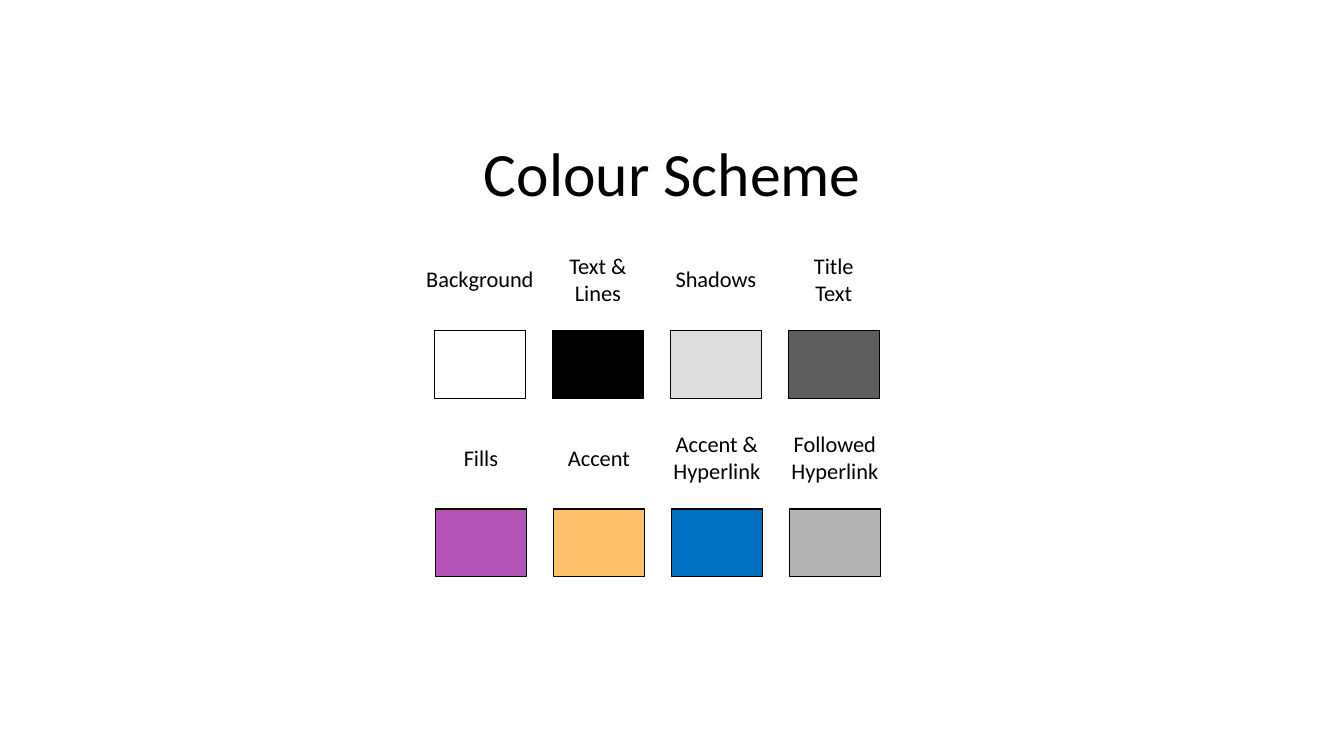
"""Build a slide that shows the eight named colours of a colour scheme."""
from pptx import Presentation, util as u
from pptx.dml.color import RGBColor
from pptx.enum import shapes, text

PX = 9144
COLOURS = {
    "ink": "000000",
    "Background": "FFFFFF",
    "Text &\nLines": "000000",
    "Shadows": "DDDDDD",
    "Title\vText": "5E5E5E",
    "Fills": "B553B7",
    "Accent": "FFC26B",
    "Accent &\nHyperlink": "0070C0",
    "Followed\nHyperlink": "B2B2B2",
}
ROWS = [
    (431, 328, [("Background", 139), ("Text &\nLines", 84), ("Shadows", 111), ("Title\vText", 63)]),
    (432, 505, [("Fills", 59), ("Accent", 88), ("Accent &\nHyperlink", 112), ("Followed\nHyperlink", 112)]),
]
SWATCH_W, SWATCH_H, PITCH = 90, 67, 117
LABEL_RISE = 51


def px(*lengths):
    """Turn px lengths into EMU."""
    return [u.Emu(round(n * PX)) for n in lengths]


def rgb(name):
    """Look up a colour by its name."""
    return RGBColor.from_string(COLOURS[name])


def style(tf, size):
    """Centre the text and set its font."""
    for p in tf.paragraphs:
        p.alignment = text.PP_ALIGN.CENTER
        for r in p.runs:
            r.font.size = u.Pt(size)
            r.font.name = "Calibri"
            r.font.color.rgb = rgb("ink")


def add_title(s, title):
    """Fill and place the title placeholder."""
    sp = s.shapes.title
    sp.left, sp.top, sp.width, sp.height = px(67, 108, 1200, 125)
    tf = sp.text_frame
    tf.text = title
    tf.vertical_anchor = text.MSO_ANCHOR.MIDDLE
    style(tf, 44)


def add_swatch(s, name, x, y):
    """Draw one outlined colour swatch."""
    sp = s.shapes.add_shape(shapes.MSO_SHAPE.RECTANGLE, *px(x, y, SWATCH_W, SWATCH_H))
    sp.shadow.inherit = False
    sp.fill.solid()
    sp.fill.fore_color.rgb = rgb(name)
    sp.line.color.rgb = rgb("ink")
    sp.line.width = u.Pt(0.75)


def add_label(s, name, centre, middle, width):
    """Write a label centred on a point."""
    height = 10 + 27 * len(name.splitlines())
    sp = s.shapes.add_textbox(*px(centre - width / 2, middle - height / 2, width, height))
    tf = sp.text_frame
    tf.text = name
    tf.word_wrap = False
    tf.auto_size = text.MSO_AUTO_SIZE.SHAPE_TO_FIT_TEXT
    style(tf, 16)


def main():
    """Build and save the slide."""
    prs = Presentation()
    prs.slide_width, prs.slide_height = px(1333, 750)
    s = prs.slides.add_slide(prs.slide_layouts[5])
    add_title(s, "Colour Scheme")
    for left, top, labels in ROWS:
        for i, (name, width) in enumerate(labels):
            x = left + i * PITCH
            add_swatch(s, name, x, top)
            add_label(s, name, x + SWATCH_W / 2, top - LABEL_RISE, width)
    prs.save("out.pptx")


if __name__ == "__main__":
    main()
